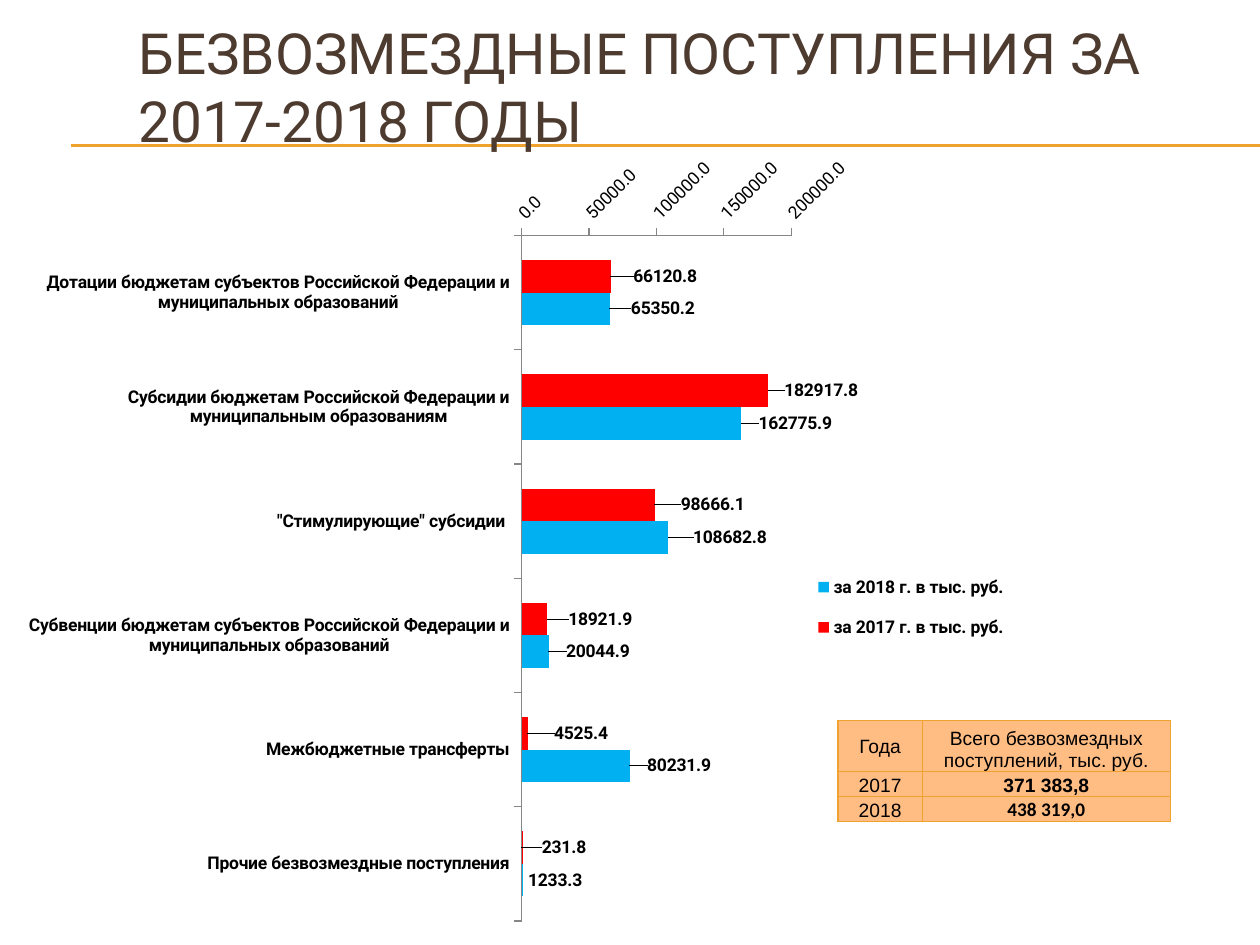
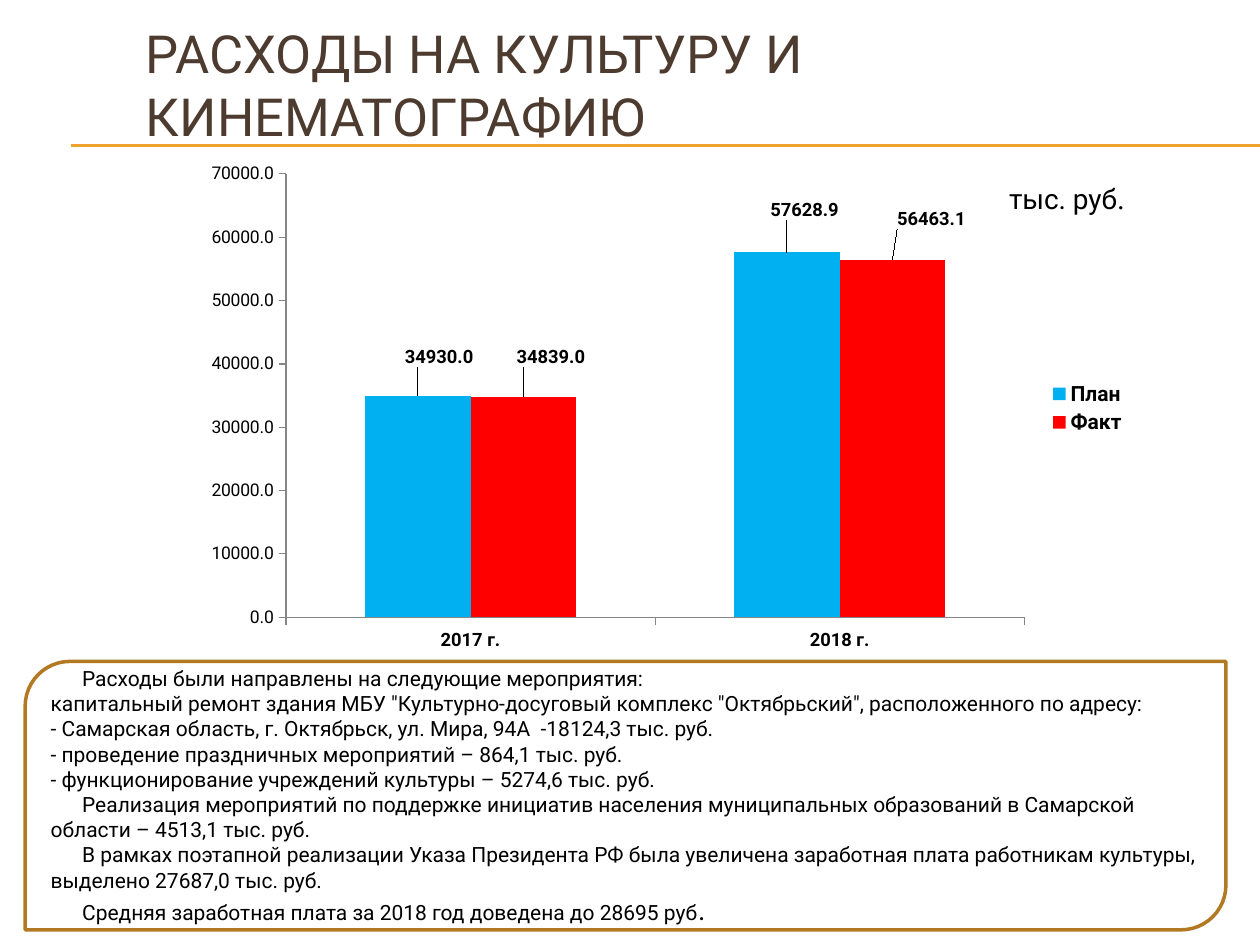
from dataclasses import dataclass

from lxml.etree import SubElement
from pptx import Presentation
from pptx.chart.data import CategoryChartData
from pptx.dml.color import RGBColor
from pptx.enum.chart import XL_CHART_TYPE as CHART
from pptx.enum.chart import XL_LABEL_POSITION as LABEL
from pptx.enum.chart import XL_LEGEND_POSITION as LEGEND
from pptx.enum.chart import XL_TICK_LABEL_POSITION as TICK_LABEL
from pptx.enum.chart import XL_TICK_MARK as TICK
from pptx.enum.shapes import MSO_CONNECTOR, MSO_SHAPE
from pptx.enum.text import MSO_ANCHOR, PP_ALIGN
from pptx.oxml import parse_xml
from pptx.oxml.ns import nsdecls, qn
from pptx.util import Inches, Pt


@dataclass(frozen=True)
class Theme:
    font: str = "Roboto"
    title: str = "4E3B30"
    text: str = "000000"
    rule: str = "F0A22E"
    frame: str = "B27822"
    white: str = "FFFFFF"
    cell: str = "FFBD84"
    axis: str = "868686"
    blue: str = "00B0F0"
    red: str = "FF0000"
    body_size: float = 12
    chart_size: float = 10
    table_size: float = 11
    unit_size: float = 16


T = Theme()

# Chart areas are (left, top, width, height) on the slide, in inches.
# Label shifts are (right, down) from the end of each bar, in inches.
GRANTS = {
    "title": ("БЕЗВОЗМЕЗДНЫЕ ПОСТУПЛЕНИЯ ЗА 2017-2018 ГОДЫ", (1, 0.22, 8.53, 0.92), 32.4),
    "chart": {
        "kind": CHART.BAR_CLUSTERED,
        "at": (0.16, 1.13, 8.39, 6.32),
        "plot": (4.14, 1.87, 2.14, 5.44),
        "legend": (6.43, 4.42, 1.6, 0.8),
        "scale": (200000, 50000),
        "label_size": 10,
        "legend_size": 10,
        "cats": [
            "Дотации бюджетам субъектов Российской Федерации и муниципальных образований",
            "Субсидии бюджетам Российской Федерации и муниципальным образованиям",
            '"Стимулирующие" субсидии ',
            "Субвенции бюджетам субъектов Российской Федерации и муниципальных образований",
            "Межбюджетные трансферты",
            "Прочие безвозмездные поступления",
        ],
        "series": [
            ("за 2017 г. в тыс. руб.", T.red,
             [66120.8, 182917.8, 98666.1, 18921.9, 4525.4, 231.8],
             [(0.14, 0), (0.09, 0), (0.17, 0), (0.13, 0), (0.17, 0), (0.12, 0)]),
            ("за 2018 г. в тыс. руб.", T.blue,
             [65350.2, 162775.9, 108682.8, 20044.9, 80231.9, 1233.3],
             [(0.13, 0), (0.1, 0), (0.16, 0), (0.1, 0), (0.1, 0), (0, 0)]),
        ],
    },
}
TOTALS = {
    "at": (6.65, 5.72, 2.64, 0.8),
    "cols": (0.67, 1.97),
    "rows": (0.4, 0.2, 0.2),
    "cells": [
        ("Года", "Всего безвозмездных поступлений, тыс. руб."),
        ("2017", "371 383,8"),
        ("2018", "438 319,0"),
    ],
}
CULTURE = {
    "title": ("РАСХОДЫ НА КУЛЬТУРУ И КИНЕМАТОГРАФИЮ", (1.06, 0.21, 8.94, 0.92), 30),
    "chart": {
        "kind": CHART.COLUMN_CLUSTERED,
        "at": (1.54, 1.23, 7.48, 4.02),
        "plot": (2.27, 1.38, 5.86, 3.52),
        "legend": (8.28, 3, 0.7, 0.48),
        "scale": (70000, 10000),
        "label_size": 10.5,
        "legend_size": 12,
        "cats": ["2017 г.", "2018 г."],
        "series": [
            ("План", T.blue, [34930, 57628.9], [(0.17, -0.19), (0.14, -0.21)]),
            ("Факт", T.red, [34839, 56463.1], [(0.22, -0.19), (0.31, -0.2)]),
        ],
    },
}
# (first line is indented, text)
MEASURES = [
    (True, "Расходы были направлены на следующие мероприятия:"),
    (False, 'капитальный ремонт здания МБУ "Культурно-досуговый комплекс "Октябрьский", '
            "расположенного по адресу:"),
    (False, "- Самарская область, г. Октябрьск, ул. Мира, 94А  -18124,3 тыс. руб."),
    (False, "- проведение праздничных мероприятий – 864,1 тыс. руб."),
    (False, "- функционирование учреждений культуры – 5274,6 тыс. руб."),
    (True, "Реализация мероприятий по поддержке инициатив населения муниципальных "
           "образований в Самарской области – 4513,1 тыс. руб."),
    (True, "В рамках поэтапной реализации Указа Президента РФ была увеличена заработная "
           "плата работникам культуры, выделено 27687,0 тыс. руб."),
    (True, "Средняя заработная плата за 2018 год доведена до 28695 руб"),
]


def rgb(color):
    return RGBColor.from_string(color)


def box(at):
    return [Inches(v) for v in at]


def style(font, size, color=T.text, name=T.font, bold=False):
    for key, value in {"size": Pt(size), "name": name, "bold": bold}.items():
        setattr(font, key, value)
    font.color.rgb = rgb(color)


def add_run(p, text, size, **fmt):
    r = p.add_run()
    r.text = text
    style(r.font, size, **fmt)


def add_text(slide, at, anchor=MSO_ANCHOR.TOP):
    """Add an empty wrapping text box and return its first paragraph."""
    tf = slide.shapes.add_textbox(*box(at)).text_frame
    tf.word_wrap = True
    tf.vertical_anchor = anchor
    return tf.paragraphs[0]


def add_slide(prs, content):
    """Add a slide with the double rule, the title and the chart."""
    slide = prs.slides.add_slide(prs.slide_layouts[6])
    for y in (1.15, 1.16):
        line = slide.shapes.add_connector(MSO_CONNECTOR.STRAIGHT, *box((0.56, y, 10, y)))
        line.line.color.rgb = rgb(T.rule)
        line.line.width = Pt(0.75)
        SubElement(line._element.spPr, qn("a:effectLst"))
    text, at, size = content["title"]
    add_run(add_text(slide, at, MSO_ANCHOR.MIDDLE), text, size, color=T.title)
    return slide


def set_layout(parent, index, values, modes=(), target=None):
    """Put a manual layout, given as fractions of the chart, into a chart part."""
    for old in parent.findall(qn("c:layout")):
        parent.remove(old)
    layout = parse_xml(f"<c:layout {nsdecls('c')}><c:manualLayout/></c:layout>")
    manual = layout[0]
    if target:
        SubElement(manual, qn("c:layoutTarget")).set("val", target)
    for tag in modes:
        SubElement(manual, qn(f"c:{tag}")).set("val", "edge")
    for tag, value in zip("xywh", values):
        SubElement(manual, qn(f"c:{tag}")).set("val", f"{value:.4f}")
    parent.insert(index, layout)


def style_axis(axis, size, bold=False):
    axis.has_major_gridlines = False
    axis.major_tick_mark = TICK.OUTSIDE
    axis.minor_tick_mark = TICK.NONE
    axis.format.line.color.rgb = rgb(T.axis)
    style(axis.tick_labels.font, size, bold=bold)


def add_series_labels(series, shifts, size, chart_size):
    labels = series.data_labels
    for key, value in {"show_value": True, "number_format": "0.0",
                       "number_format_is_linked": False,
                       "position": LABEL.OUTSIDE_END}.items():
        setattr(labels, key, value)
    style(labels.font, size, bold=True)
    for i, shift in enumerate(shifts):
        if any(shift):
            label = series.points[i].data_label
            label.position = LABEL.OUTSIDE_END
            style(label.font, size, bold=True)
    for label in labels._element.findall(qn("c:dLbl")):
        shift = shifts[int(label.find(qn("c:idx")).get("val"))]
        set_layout(label, 1, [d / full for d, full in zip(shift, chart_size)])


def add_chart(slide, c):
    data = CategoryChartData(number_format="0.0")
    data.categories = c["cats"]
    for name, _, values, _ in c["series"]:
        data.add_series(name, values)
    chart = slide.shapes.add_chart(c["kind"], *box(c["at"]), data).chart
    style(chart.font, T.chart_size)
    chart.has_title = False
    left, top, width, height = c["at"]

    def fractions(area):
        x, y, w, h = area
        return (x - left) / width, (y - top) / height, w / width, h / height

    plot = chart.plots[0]
    for key, value in {"gap_width": 150, "overlap": 0, "vary_by_categories": False}.items():
        setattr(plot, key, value)
    for series, (_, color, _, shifts) in zip(plot.series, c["series"]):
        series.format.fill.solid()
        series.format.fill.fore_color.rgb = rgb(color)
        series.invert_if_negative = False
        add_series_labels(series, shifts, c["label_size"], (width, height))

    cat, val = chart.category_axis, chart.value_axis
    style_axis(cat, c["label_size"], bold=True)
    style_axis(val, T.chart_size)
    val.minimum_scale = 0
    val.maximum_scale, val.major_unit = c["scale"]
    val.tick_labels.number_format = "0.0"
    val.tick_labels.number_format_is_linked = False
    if c["kind"] == CHART.BAR_CLUSTERED:
        cat.reverse_order = True
        cat.tick_label_position = TICK_LABEL.LOW
        val._element.find(qn("c:txPr")).find(qn("a:bodyPr")).set("rot", "-2700000")

    chart.has_legend = True
    legend = chart.legend
    legend.position = LEGEND.RIGHT
    legend.include_in_layout = False
    style(legend.font, c["legend_size"], bold=True)
    modes = ("xMode", "yMode")
    set_layout(legend._element, 1, fractions(c["legend"]), modes)
    plot_area = chart._chartSpace.chart.plotArea
    set_layout(plot_area, 0, fractions(c["plot"]), modes, "inner")


def add_borders(cell):
    tc_pr = cell._tc.get_or_add_tcPr()
    for side in "LRTB":
        tc_pr.append(parse_xml(
            f'<a:ln{side} {nsdecls("a")} w="{Pt(0.79)}"><a:solidFill>'
            f'<a:srgbClr val="{T.rule}"/></a:solidFill></a:ln{side}>'))


def add_totals(slide):
    cells = TOTALS["cells"]
    table = slide.shapes.add_table(len(cells), len(cells[0]), *box(TOTALS["at"])).table
    for col, width in zip(table.columns, TOTALS["cols"]):
        col.width = Inches(width)
    for i, (row, height) in enumerate(zip(table.rows, TOTALS["rows"])):
        row.height = Inches(height)
        for j, text in enumerate(cells[i]):
            cell = table.cell(i, j)
            for side in ("left", "right", "top"):
                setattr(cell, f"margin_{side}", Inches(0.01))
            cell.margin_bottom = 0
            cell.vertical_anchor = MSO_ANCHOR.BOTTOM if i or j else MSO_ANCHOR.MIDDLE
            add_borders(cell)
            cell.fill.solid()
            cell.fill.fore_color.rgb = rgb(T.cell)
            p = cell.text_frame.paragraphs[0]
            p.alignment = PP_ALIGN.CENTER
            is_last_total = (i, j) == (2, 1)
            add_run(p, text, T.table_size, bold=bool(i and j),
                    name="Calibri" if is_last_total else "Arial")


def add_measures(slide):
    sp = slide.shapes.add_shape(MSO_SHAPE.ROUND_2_DIAG_RECTANGLE,
                                *box((0.2, 5.25, 9.53, 2.13)))
    sp.shadow.inherit = False
    sp.fill.solid()
    sp.fill.fore_color.rgb = rgb(T.white)
    sp.line.color.rgb = rgb(T.frame)
    sp.line.width = Pt(2)
    tf = sp.text_frame
    tf.word_wrap = True
    tf.vertical_anchor = MSO_ANCHOR.MIDDLE
    for i, (indented, text) in enumerate(MEASURES):
        p = tf.add_paragraph() if i else tf.paragraphs[0]
        p.alignment = PP_ALIGN.LEFT
        if indented:
            p._p.get_or_add_pPr().set("indent", str(Inches(0.25)))
        add_run(p, text, T.body_size)
    add_run(p, ".", T.unit_size)


def main():
    prs = Presentation()
    prs.slide_width, prs.slide_height = Inches(10), Inches(7.5)

    grants = add_slide(prs, GRANTS)
    add_totals(grants)
    add_chart(grants, GRANTS["chart"])

    culture = add_slide(prs, CULTURE)
    add_measures(culture)
    add_chart(culture, CULTURE["chart"])
    unit = add_text(culture, (7.91, 1.39, 1.89, 0.37))
    add_run(unit, "тыс. руб", T.unit_size)
    add_run(unit, ".", T.unit_size, name="Times New Roman")

    prs.save("out.pptx")


if __name__ == "__main__":
    main()
